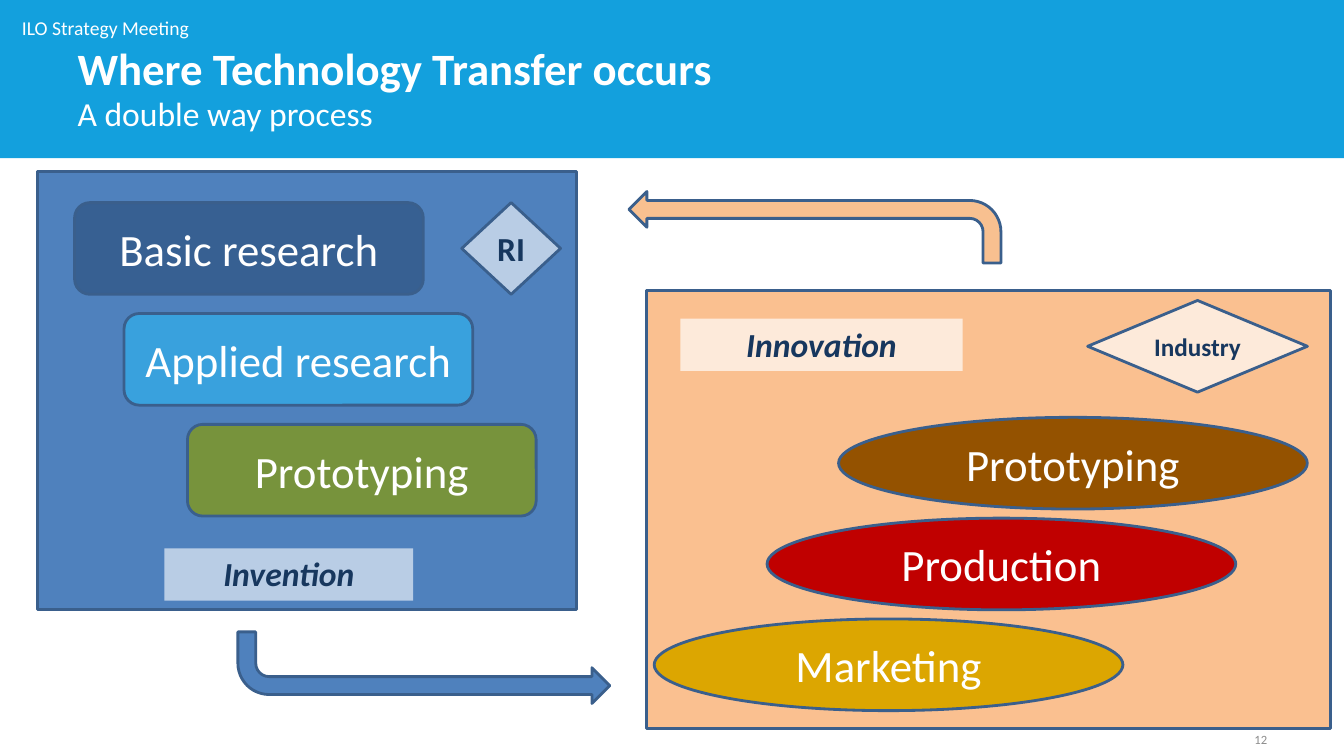
from dataclasses import dataclass

from lxml.etree import SubElement
from pptx import Presentation
from pptx.dml.color import RGBColor
from pptx.enum.shapes import MSO_SHAPE as Shape
from pptx.enum.text import MSO_ANCHOR as Anchor, MSO_AUTO_SIZE as AutoSize, PP_ALIGN as Align
from pptx.oxml.ns import qn
from pptx.util import Pt


@dataclass(frozen=True)
class Theme:
    font: str = "Calibri"
    banner: str = "13A0DD"
    white: str = "FFFFFF"
    navy: str = "17375E"
    outline: str = "3A5F8C"
    grey: str = "8C8C8C"
    research: str = "4F81BD"
    research_pale: str = "B9CDE5"
    industry: str = "FAC090"
    industry_arrow: str = "F8C090"
    industry_pale: str = "FDEADA"
    heading: int = 32
    label: int = 24
    tag: int = 18
    meeting: int = 14
    footer: int = 9
    line: int = 2
    text_outline: float = 0.75


def write(frame, text, *, size, font, color, bold=False, italic=False,
          align=Align.LEFT, anchor=Anchor.TOP, wrap=True, fit=AutoSize.NONE):
    """Put one formatted paragraph into a text frame and return its run."""
    frame.word_wrap = wrap
    frame.auto_size = fit
    frame.vertical_anchor = anchor
    paragraph = frame.paragraphs[0]
    paragraph.alignment = align
    run = paragraph.add_run()
    run.text = text
    run.font.name, run.font.size = font, Pt(size)
    run.font.bold, run.font.italic = bold, italic
    run.font.color.rgb = RGBColor.from_string(color)
    return run


class SlideBuilder:
    def __init__(self, slide, theme):
        self.slide = slide
        self.theme = theme

    def placeholder(self, index, box, text, **style):
        """Move a template placeholder in front of what is drawn so far and fill it."""
        holder = self.slide.placeholders[index]
        self.slide.shapes._spTree.append(holder._element)
        holder.left, holder.top, holder.width, holder.height = map(Pt, box)
        write(holder.text_frame, text, font=self.theme.font, color=self.theme.white, **style)
        return holder.text_frame.paragraphs[0]

    def subtitle(self, box, text):
        paragraph = self.placeholder(1, box, text, size=self.theme.label)
        paragraph.space_before = Pt(0)
        properties = paragraph._p.get_or_add_pPr()
        properties.set("marL", "0")
        properties.set("indent", "0")
        SubElement(properties, qn("a:buNone"))

    def text(self, box, text, **style):
        frame = self.slide.shapes.add_textbox(*map(Pt, box)).text_frame
        write(frame, text, font=self.theme.font, **style)

    def block(self, kind, box, fill, outlined=True):
        block = self.slide.shapes.add_shape(kind, *map(Pt, box))
        block.shadow.inherit = False
        block.fill.solid()
        block.fill.fore_color.rgb = RGBColor.from_string(fill)
        if outlined:
            block.line.color.rgb = RGBColor.from_string(self.theme.outline)
            block.line.width = Pt(self.theme.line)
        else:
            block.line.fill.background()
        return block

    def stage(self, kind, box, fill, text):
        write(self.block(kind, box, fill).text_frame, text, size=self.theme.heading,
              font=self.theme.font, color=self.theme.white,
              align=Align.CENTER, anchor=Anchor.MIDDLE)

    def outcome(self, box, fill, text):
        write(self.block(Shape.RECTANGLE, box, fill, outlined=False).text_frame, text,
              size=self.theme.label, font=self.theme.font, color=self.theme.navy,
              bold=True, italic=True, align=Align.CENTER, wrap=False)

    def actor(self, box, fill, text, size):
        """Draw a diamond whose letters have a thin outline."""
        run = write(self.block(Shape.DIAMOND, box, fill).text_frame, text, size=size,
                    font=self.theme.font, color=self.theme.navy, bold=True,
                    align=Align.CENTER, anchor=Anchor.MIDDLE)
        properties = run._r.get_or_add_rPr()
        edge = SubElement(properties, qn("a:ln"), w=str(Pt(self.theme.text_outline)))
        SubElement(SubElement(edge, qn("a:solidFill")), qn("a:srgbClr"), val=self.theme.navy)
        properties.insert(0, edge)

    def transfer_arrow(self, box, fill, flip):
        arrow = self.block(Shape.BENT_ARROW, box, fill)
        arrow._element.spPr.find(qn("a:xfrm")).set(flip, "1")


def main():
    theme = Theme()
    deck = Presentation()
    deck.slide_width, deck.slide_height = Pt(960), Pt(540)
    page = SlideBuilder(deck.slides.add_slide(deck.slide_layouts[1]), theme)

    page.block(Shape.RECTANGLE, (0, 0, 960, 113), theme.banner, outlined=False)
    page.text((8.6, 7.9, 135.4, 24.5), "ILO Strategy Meeting", size=theme.meeting,
              color=theme.white, wrap=False, fit=AutoSize.SHAPE_TO_FIT_TEXT)
    page.placeholder(0, (48.2, 27.4, 749.5, 43.9), "Where Technology Transfer occurs",
                     size=theme.heading, bold=True, anchor=Anchor.BOTTOM)
    page.subtitle((48.2, 62.6, 749.5, 46.8), "A double way process")

    page.block(Shape.RECTANGLE, (461.5, 207.4, 488.9, 313.2), theme.industry)
    page.outcome((486, 227.5, 201.6, 37.4), theme.industry_pale, "Innovation")
    page.actor((776.9, 214.6, 157, 65.5), theme.industry_pale, "Industry", theme.tag)
    page.block(Shape.RECTANGLE, (26.6, 122.4, 385.2, 313.2), theme.research)
    page.outcome((117.4, 391.7, 177.8, 37.4), theme.research_pale, "Invention")
    page.actor((329.8, 144.7, 70.6, 65.5), theme.research_pale, "RI", theme.label)

    research_stages = [
        ("Basic research", 53.3, "376092"),
        ("Applied research", 88.6, "39A1DD"),
        ("Prototyping", 133.9, "77933C"),
    ]
    industry_stages = [
        ("Prototyping", 599, "945200"),
        ("Production", 547.9, "C00000"),
        ("Marketing", 467.3, "DCA601"),
    ]
    for kind, stages, top, step, width in (
        (Shape.ROUNDED_RECTANGLE, research_stages, 144.7, 79.2, 249.1),
        (Shape.OVAL, industry_stages, 298.1, 72, 334.8),
    ):
        for row, (name, left, fill) in enumerate(stages):
            page.stage(kind, (left, top + row * step, width, 65.5), fill, name)

    page.transfer_arrow((169.9, 451.4, 265.7, 51.1), theme.research, "flipV")
    page.transfer_arrow((449.3, 136.8, 265.7, 51.1), theme.industry_arrow, "flipH")
    page.text((688.3, 508.3, 223.9, 28.8), "12", size=theme.footer, color=theme.grey,
              align=Align.RIGHT, anchor=Anchor.BOTTOM)
    deck.save("out.pptx")


if __name__ == "__main__":
    main()
